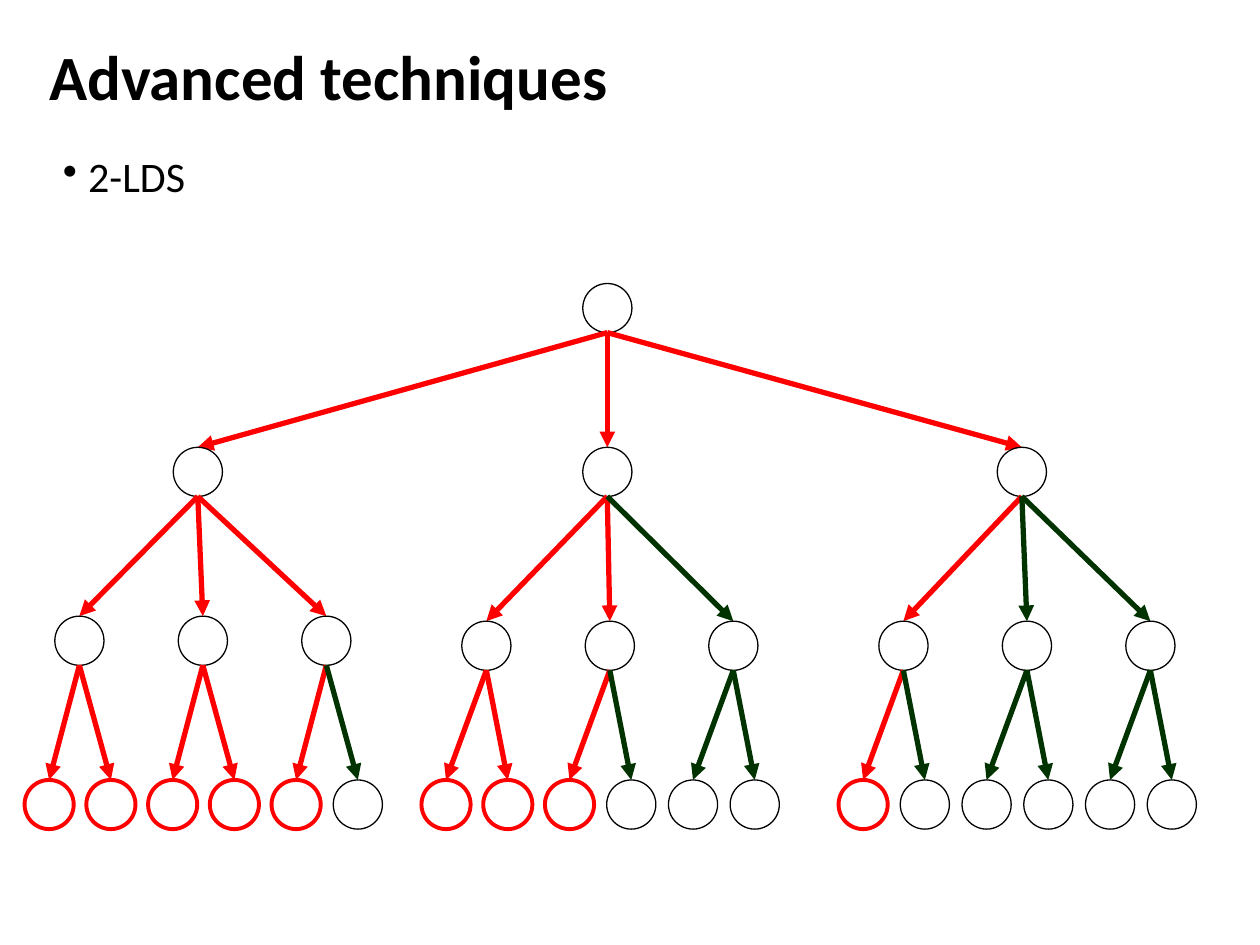
from lxml.etree import SubElement
from pptx import Presentation
from pptx.dml.color import RGBColor
from pptx.enum.shapes import MSO_CONNECTOR, MSO_SHAPE
from pptx.oxml.ns import qn
from pptx.util import Inches, Pt

COLORS = {"black": "000000", "red": "FF0000", "green": "003300"}
FONT = "Calibri"
SIZE = 0.39
ROOT = (4.82, 2.25)
HEAD_TOP = 3.55
LEAF_TOP = 6.19
MID_STEP = 0.98
LEAF_STEP = 0.49
BRANCHES = [
    {"head": 1.57, "mid": 0.63, "top": 4.89, "leaf": 0.39, "reds": 5},
    {"head": 4.82, "mid": 3.86, "top": 4.93, "leaf": 3.54, "reds": 3},
    {"head": 8.11, "mid": 7.17, "top": 4.93, "leaf": 6.85, "reds": 1},
]


def color(name):
    return RGBColor.from_string(COLORS[name])


def add_text(slide, text, box, size, bold=False):
    frame = slide.shapes.add_textbox(*map(Inches, box)).text_frame
    frame.word_wrap = True
    frame.margin_left = frame.margin_right = 0
    frame.margin_top = frame.margin_bottom = 0
    para = frame.paragraphs[0]
    para.text = text
    para.font.name = FONT
    para.font.size = Pt(size)
    para.font.bold = bold
    para.font.color.rgb = color("black")
    return para


def add_bullet(slide, text, box, size):
    para = add_text(slide, text, box, size)
    para.line_spacing = 0.9
    props = para._p.get_or_add_pPr()
    props.set("marL", str(Inches(0.2)))
    props.set("indent", str(-Inches(0.2)))
    mark = props.makeelement(qn("a:buChar"), {"char": "•"})
    props.find(qn("a:defRPr")).addprevious(mark)


def add_node(slide, x, top, tone="black", width=0.75):
    node = slide.shapes.add_shape(
        MSO_SHAPE.OVAL, Inches(x - SIZE / 2), Inches(top), Inches(SIZE), Inches(SIZE)
    )
    node.shadow.inherit = False
    node.fill.background()
    node.line.color.rgb = color(tone)
    node.line.width = Pt(width)


def add_edge(slide, x, top, end_x, end_top, tone):
    edge = slide.shapes.add_connector(
        MSO_CONNECTOR.STRAIGHT,
        Inches(x), Inches(top + SIZE), Inches(end_x), Inches(end_top),
    )
    edge.line.color.rgb = color(tone)
    edge.line.width = Pt(3)
    SubElement(edge.line._get_or_add_ln(), qn("a:tailEnd"), type="triangle")
    SubElement(edge._element.spPr, qn("a:effectLst"))


def add_branch(slide, head, mid, top, leaf, reds):
    add_edge(slide, *ROOT, head, HEAD_TOP, "red")
    add_node(slide, head, HEAD_TOP)
    for i in range(3):
        x = mid + i * MID_STEP
        add_edge(slide, head, HEAD_TOP, x, top, "red" if 2 * i < reds else "green")
        add_node(slide, x, top)
        for j in (2 * i, 2 * i + 1):
            end = leaf + j * LEAF_STEP
            used = j < reds
            add_edge(slide, x, top, end, LEAF_TOP, "red" if used else "green")
            if used:
                add_node(slide, end, LEAF_TOP, "red", 2.25)
            else:
                add_node(slide, end, LEAF_TOP)


def main():
    deck = Presentation()
    deck.slide_width = Inches(10)
    deck.slide_height = Inches(7.5)
    slide = deck.slides.add_slide(deck.slide_layouts[6])
    add_text(slide, "Advanced techniques", (0.39, 0.3, 7.68, 0.93), 36, True)
    add_bullet(slide, "2-LDS", (0.5, 1.24, 9, 1.01), 24)
    add_node(slide, *ROOT)
    for branch in BRANCHES:
        add_branch(slide, **branch)
    deck.save("out.pptx")


if __name__ == "__main__":
    main()
